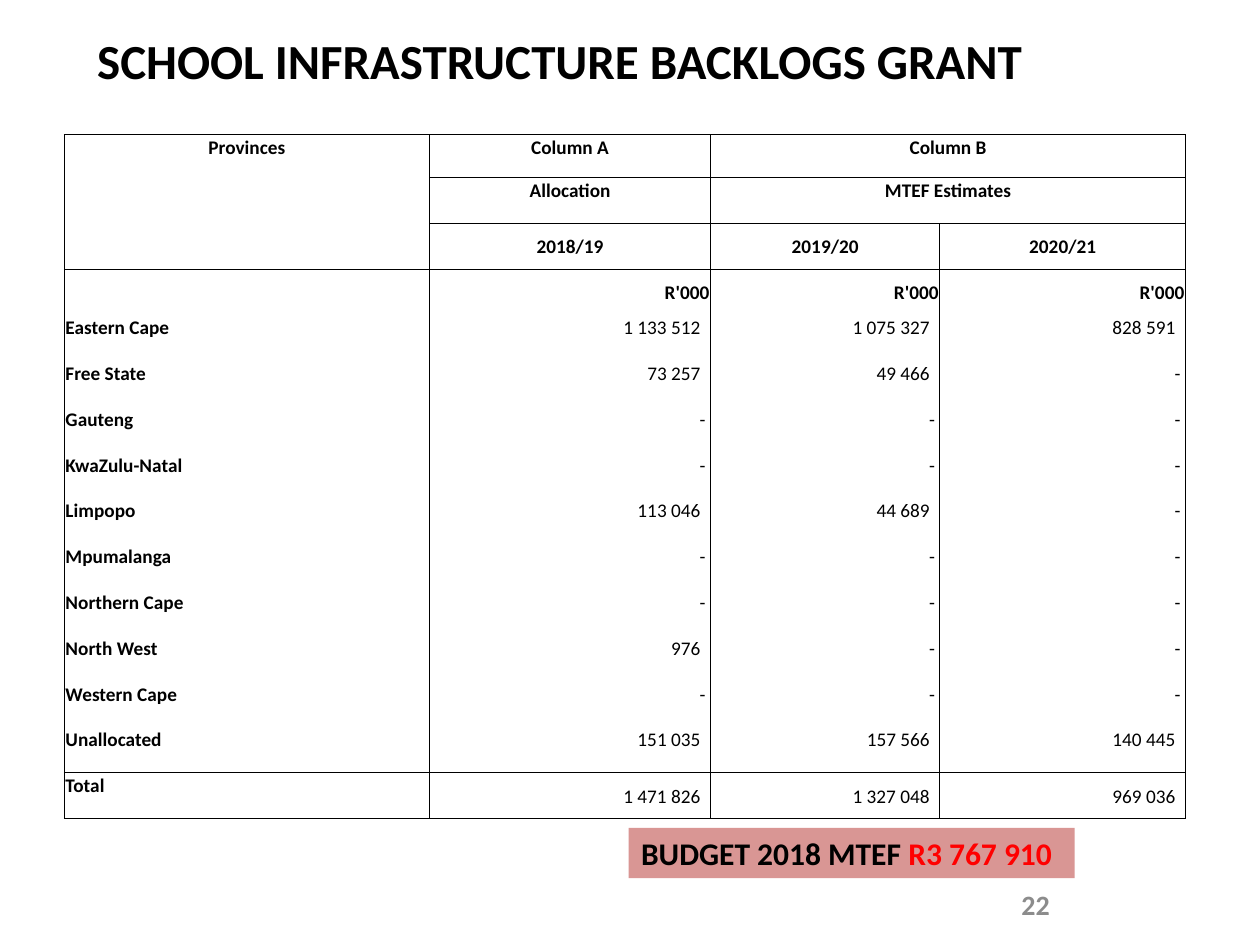
from lxml import etree
from pptx import Presentation
from pptx.dml.color import RGBColor
from pptx.enum.shapes import MSO_SHAPE
from pptx.enum.text import MSO_ANCHOR, PP_ALIGN
from pptx.oxml.ns import qn
from pptx.util import Inches, Pt

LEFT, CENTER, RIGHT = PP_ALIGN.LEFT, PP_ALIGN.CENTER, PP_ALIGN.RIGHT
TOP, MIDDLE = MSO_ANCHOR.TOP, MSO_ANCHOR.MIDDLE
RECTANGLE = MSO_SHAPE.RECTANGLE

BLACK = RGBColor(0x00, 0x00, 0x00)
GRAY = RGBColor(0x8C, 0x8C, 0x8C)
RED = RGBColor(0xFF, 0x00, 0x00)
ROSE = RGBColor(0xD9, 0x96, 0x94)

TITLE_ONLY = 5
HEADER_ROWS = 3
COLUMN_WIDTHS = [2.9, 2.23, 1.82, 1.95]
FIRST_ROW_HEIGHT = 0.34
TABLE_HEIGHT = 5.43
CELL_MARGIN = 0.01
NUMBER_MARGIN = 0.08
DASH_MARGIN = 0.04

HEADERS = [
    ["Provinces", "Column A", "Column B", ""],
    ["", "Allocation", "MTEF Estimates", ""],
    ["", "2018/19", "2019/20", "2020/21"],
    ["", "R'000", "R'000", "R'000"],
]
ALLOCATIONS = [
    ("Eastern Cape", 1133512, 1075327, 828591),
    ("Free State", 73257, 49466, 0),
    ("Gauteng", 0, 0, 0),
    ("KwaZulu-Natal", 0, 0, 0),
    ("Limpopo", 113046, 44689, 0),
    ("Mpumalanga", 0, 0, 0),
    ("Northern Cape", 0, 0, 0),
    ("North West", 976, 0, 0),
    ("Western Cape", 0, 0, 0),
    ("Unallocated", 151035, 157566, 140445),
    ("Total", 1471826, 1327048, 969036),
]


def spaced(amount):
    """Group thousands with spaces and show zero as a dash."""
    return f"{amount:,}".replace(",", " ") if amount else "-"


def set_borders(cell, sides):
    """Draw thin lines on the named sides (L, R, T, B) and none elsewhere."""
    properties = cell._tc.get_or_add_tcPr()
    for index, side in enumerate("LRTB"):
        line = etree.Element(qn(f"a:ln{side}"), w=str(Pt(0.5)))
        if side in sides:
            fill = etree.SubElement(line, qn("a:solidFill"))
            etree.SubElement(fill, qn("a:srgbClr"), val=str(BLACK))
        else:
            etree.SubElement(line, qn("a:noFill"))
        properties.insert(index, line)


class SlideBuilder:
    font_name = "Calibri"

    def __init__(self, slide):
        self.slide = slide

    def format_text(self, text_frame, size, color=BLACK, bold=True, align=LEFT):
        for paragraph in text_frame.paragraphs:
            paragraph.alignment = align
            for run in paragraph.runs:
                font = run.font
                font.name, font.size, font.bold = self.font_name, Pt(size), bold
                font.color.rgb = color

    def title(self, text, left, top, width, height):
        shape = self.slide.shapes.title
        shape.left, shape.top = Inches(left), Inches(top)
        shape.width, shape.height = Inches(width), Inches(height)
        shape.text_frame.text = text
        shape.text_frame.vertical_anchor = MIDDLE
        self.format_text(shape.text_frame, 28, align=CENTER)

    def page_number(self, text, left, top, width, height):
        shape = self.slide.shapes.add_textbox(
            Inches(left), Inches(top), Inches(width), Inches(height))
        shape.text_frame.word_wrap = True
        shape.text_frame.vertical_anchor = MIDDLE
        shape.text_frame.text = text
        self.format_text(shape.text_frame, 16, GRAY, align=RIGHT)

    def budget_banner(self, label, amount, left, top, width, height):
        shape = self.slide.shapes.add_shape(
            RECTANGLE, Inches(left), Inches(top), Inches(width), Inches(height))
        shape.shadow.inherit = False
        shape.fill.solid()
        shape.fill.fore_color.rgb = ROSE
        shape.line.fill.background()
        shape.text_frame.vertical_anchor = TOP
        shape.text_frame.text = label
        amount_run = shape.text_frame.paragraphs[0].add_run()
        amount_run.text = amount
        self.format_text(shape.text_frame, 18)
        amount_run.font.color.rgb = RED

    def cell(self, cell, text, borders, align, anchor, bold, right_margin):
        cell.text = text
        cell.fill.background()
        cell.vertical_anchor = anchor
        cell.margin_left = cell.margin_top = Inches(CELL_MARGIN)
        cell.margin_right, cell.margin_bottom = Inches(right_margin), 0
        self.format_text(cell.text_frame, 11, bold=bold, align=align)
        set_borders(cell, borders)

    def grant_table(self, left, top):
        rows = HEADERS + [[name, *map(spaced, amounts)]
                          for name, *amounts in ALLOCATIONS]
        last = len(rows) - 1
        table = self.slide.shapes.add_table(
            len(rows), len(COLUMN_WIDTHS), Inches(left), Inches(top),
            Inches(sum(COLUMN_WIDTHS)), Inches(TABLE_HEIGHT)).table
        table.first_row = table.horz_banding = False
        for column, width in zip(table.columns, COLUMN_WIDTHS):
            column.width = Inches(width)
        for row in table.rows:
            row.height = Inches((TABLE_HEIGHT - FIRST_ROW_HEIGHT) / last)
        table.rows[0].height = Inches(FIRST_ROW_HEIGHT)

        for row_index, texts in enumerate(rows):
            is_header = row_index < HEADER_ROWS
            is_amount_row = row_index >= len(HEADERS)
            borders = "LR"
            if is_header or row_index in (HEADER_ROWS, last):
                borders += "T"
            if is_header or row_index >= last - 1:
                borders += "B"
            for column_index, text in enumerate(texts):
                is_name = column_index == 0
                is_amount = is_amount_row and not is_name
                align = CENTER if is_header else LEFT if is_name else RIGHT
                centered = row_index in (2, 3, last) and not is_name
                margin = CELL_MARGIN
                if is_amount:
                    margin = DASH_MARGIN if text == "-" else NUMBER_MARGIN
                self.cell(table.cell(row_index, column_index), text, borders,
                          align, MIDDLE if centered else TOP,
                          not is_amount, margin)

        table.cell(0, 0).merge(table.cell(HEADER_ROWS - 1, 0))
        for row_index in (0, 1):
            table.cell(row_index, 2).merge(table.cell(row_index, 3))


def main():
    presentation = Presentation()
    presentation.slide_width, presentation.slide_height = Inches(10), Inches(7.5)
    layout = presentation.slide_layouts[TITLE_ONLY]
    builder = SlideBuilder(presentation.slides.add_slide(layout))
    builder.page_number("22", 6.1, 6.98, 2.33, 0.4)
    builder.grant_table(0.51, 1.07)
    builder.title("SCHOOL INFRASTRUCTURE BACKLOGS GRANT", 0.51, 0.13, 7.86, 0.69)
    builder.budget_banner("BUDGET 2018 MTEF ", "R3 767 910", 4.99, 6.57, 3.54, 0.4)
    presentation.save("out.pptx")


if __name__ == "__main__":
    main()
